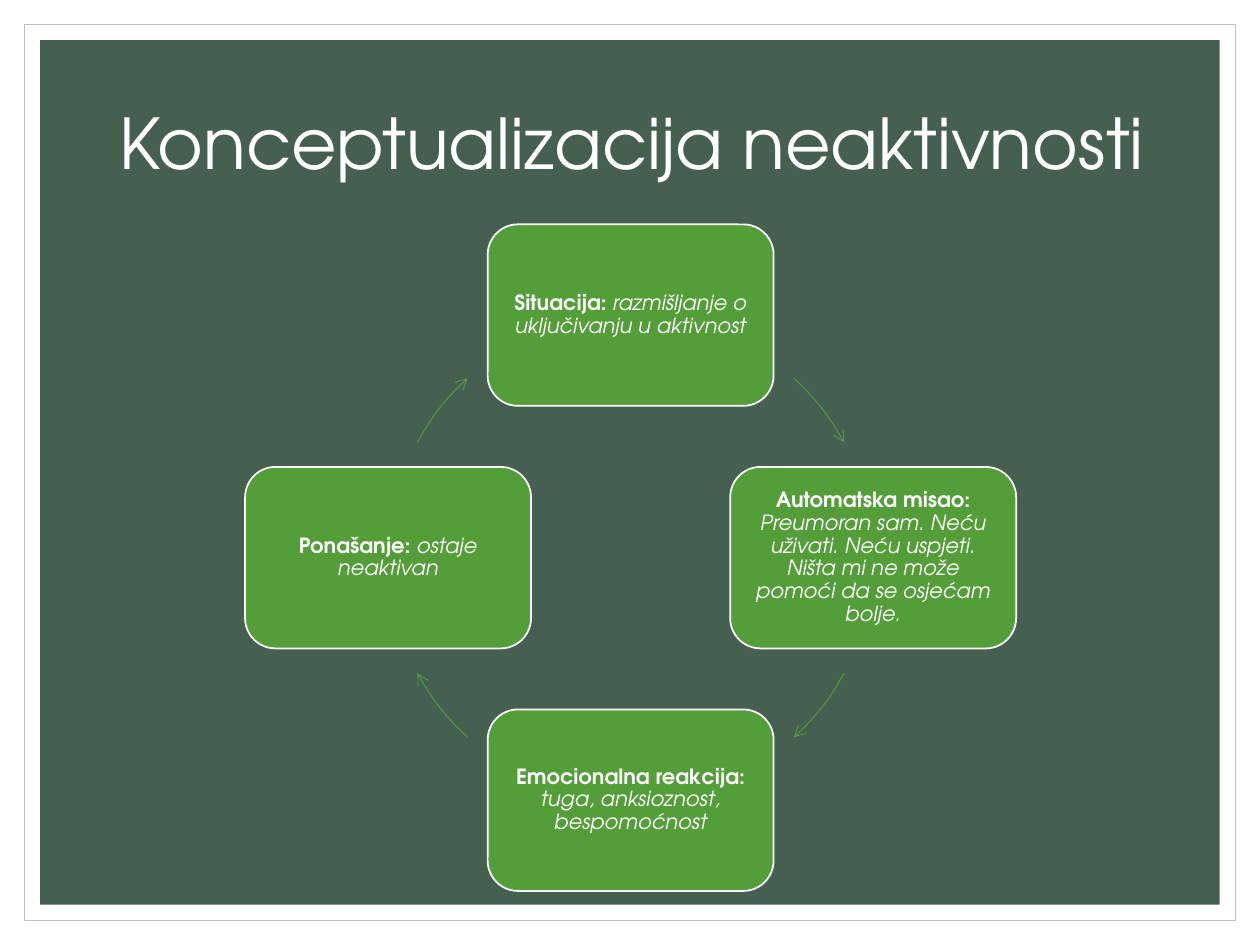
from math import cos, radians, sin

from lxml import etree
from pptx import Presentation
from pptx.dml.color import RGBColor
from pptx.enum import shapes, text
from pptx.oxml.ns import qn
from pptx.util import Pt

TITLE = "Konceptualizacija neaktivnosti"
# Clockwise from the top
STAGES = [
    ("Situacija: ", "razmišljanje o uključivanju u aktivnost"),
    ("Automatska misao: ", "Preumoran sam. Neću uživati. Neću uspjeti. "
                           "Ništa mi ne može pomoći da se osjećam bolje."),
    ("Emocionalna reakcija: ", "tuga, anksioznost, bespomoćnost"),
    ("Ponašanje: ", "ostaje neaktivan"),
]
# Margin from the slide edge, fill, outline
PANELS = [(13.7, "white", "frame"), (23, "panel", None)]

COLORS = {"white": "FFFFFF", "frame": "BFBFBF", "panel": "455F51", "stage": "549E39"}
FONT = "TeX Gyre Adventor"
SLIDE_W, SLIDE_H = 720, 540
CENTER_X, CENTER_Y, RADIUS = 360.4, 318.7, 138.6
STAGE_W, STAGE_H = 163.4, 103.7
# Arrow ends in degrees, as (start, end) for each quarter, 0 pointing right
ARROW_ANGLES = [(312.3, 331.6), (28.4, 47.7), (132.3, 151.6), (208.4, 227.7)]


def rgb(name):
    return RGBColor.from_string(COLORS[name])


def style_outline(shape, color, width):
    shape.shadow.inherit = False
    if color:
        shape.line.color.rgb = rgb(color)
        shape.line.width = Pt(width)
    else:
        shape.line.fill.background()


def style_run(run, size, bold=False, italic=False):
    run.font.name = FONT
    run.font.size = Pt(size)
    run.font.bold = bold
    run.font.italic = italic
    run.font.color.rgb = rgb("white")


def center_text(frame):
    frame.word_wrap = True
    frame.auto_size = text.MSO_AUTO_SIZE.NONE
    frame.vertical_anchor = text.MSO_ANCHOR.MIDDLE
    frame.paragraphs[0].alignment = text.PP_ALIGN.CENTER
    frame.paragraphs[0].line_spacing = 0.9


def add_panel(slide, margin, fill, outline):
    panel = slide.shapes.add_shape(
        shapes.MSO_SHAPE.RECTANGLE, Pt(margin), Pt(margin),
        Pt(SLIDE_W - 2 * margin), Pt(SLIDE_H - 2 * margin))
    panel.fill.solid()
    panel.fill.fore_color.rgb = rgb(fill)
    style_outline(panel, outline, 0.5)


def add_title(slide):
    title = slide.shapes.title
    slide.shapes._spTree.append(title._element)  # in front of the panels
    title.left, title.top, title.width, title.height = Pt(58.6), Pt(29.9), Pt(604.8), Pt(108)
    title.text_frame.text = TITLE
    center_text(title.text_frame)
    style_run(title.text_frame.paragraphs[0].runs[0], 40)


def add_stage(slide, angle, label, detail):
    x = CENTER_X + RADIUS * cos(radians(angle))
    y = CENTER_Y + RADIUS * sin(radians(angle))
    stage = slide.shapes.add_shape(
        shapes.MSO_SHAPE.ROUNDED_RECTANGLE, Pt(x - STAGE_W / 2), Pt(y - STAGE_H / 2),
        Pt(STAGE_W), Pt(STAGE_H))
    stage.fill.solid()
    stage.fill.fore_color.rgb = rgb("stage")
    style_outline(stage, "white", 1)
    frame = stage.text_frame
    frame.margin_left = frame.margin_right = Pt(3.6)
    frame.margin_top = frame.margin_bottom = Pt(3.6)
    center_text(frame)
    for words, is_label in ((label, True), (detail, False)):
        run = frame.paragraphs[0].add_run()
        run.text = words
        style_run(run, 12, bold=is_label, italic=not is_label)


def add_arc_arrow(slide, start, end):
    """Draw part of the cycle's circle in a frame that holds the whole circle."""
    builder = slide.shapes.build_freeform(Pt(CENTER_X - RADIUS), Pt(CENTER_Y - RADIUS))
    builder.add_line_segments([(Pt(CENTER_X + RADIUS), Pt(CENTER_Y + RADIUS))], close=False)
    arrow = builder.convert_to_shape()
    outline = arrow._element.find(".//" + qn("a:path"))
    for segment in list(outline):
        outline.remove(segment)
    move = etree.SubElement(outline, qn("a:moveTo"))
    etree.SubElement(move, qn("a:pt"),
                     x=str(Pt(RADIUS * (1 + cos(radians(start))))),
                     y=str(Pt(RADIUS * (1 + sin(radians(start))))))
    etree.SubElement(outline, qn("a:arcTo"), wR=str(Pt(RADIUS)), hR=str(Pt(RADIUS)),
                     stAng=str(round(start * 60000)), swAng=str(round((end - start) * 60000)))
    arrow.fill.background()
    style_outline(arrow, "stage", 0.5)
    etree.SubElement(arrow.line._get_or_add_ln(), qn("a:tailEnd"), type="arrow")


def main():
    deck = Presentation()
    deck.slide_width, deck.slide_height = Pt(SLIDE_W), Pt(SLIDE_H)
    slide = deck.slides.add_slide(deck.slide_layouts[5])
    for panel in PANELS:
        add_panel(slide, *panel)
    add_title(slide)
    for index, (stage, angles) in enumerate(zip(STAGES, ARROW_ANGLES)):
        add_stage(slide, 90 * index - 90, *stage)
        add_arc_arrow(slide, *angles)
    deck.save("out.pptx")


if __name__ == "__main__":
    main()
